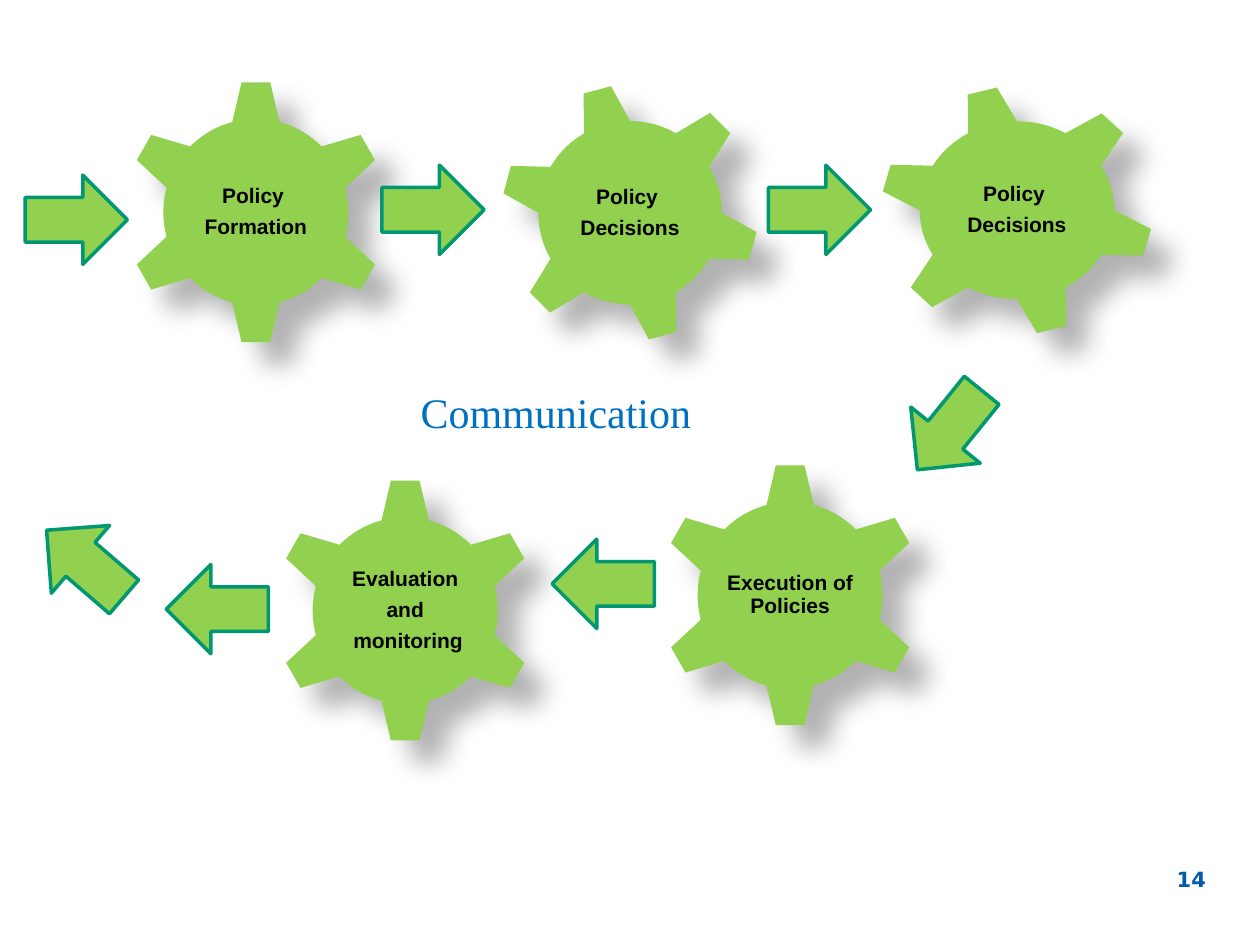
import math

from lxml import etree
from pptx import Presentation
from pptx.dml.color import RGBColor
from pptx.enum.shapes import MSO_SHAPE
from pptx.enum.text import MSO_ANCHOR, MSO_AUTO_SIZE, PP_ALIGN
from pptx.oxml.ns import qn
from pptx.util import Cm, Pt

GEAR = MSO_SHAPE.GEAR_6
RECT = MSO_SHAPE.RECTANGLE
ARROW = MSO_SHAPE.RIGHT_ARROW
MIDDLE = MSO_ANCHOR.MIDDLE
LEFT, CENTER, RIGHT = PP_ALIGN.LEFT, PP_ALIGN.CENTER, PP_ALIGN.RIGHT

GREEN, TEAL, BLACK = "92D050", "009771", "000000"
GEAR_W, GEAR_H, HUB = 5.33, 5.36, 2.64
ROOT_R, TIP_R = 1.85, 2.58


def rgb(value):
    return RGBColor.from_string(value)


def style(s, line=None):
    """Green fill, no theme shadow and an optional outline."""
    s.shadow.inherit = False
    s.fill.solid()
    s.fill.fore_color.rgb = rgb(GREEN)
    if line:
        s.line.color.rgb = rgb(line)
        s.line.width = Pt(2)
    else:
        s.line.fill.background()


def add_shadow(s):
    """Soft shadow, down and to the right."""
    effects = s._element.spPr.find(qn("a:effectLst"))
    shadow = etree.SubElement(effects, qn("a:outerShdw"), blurRad=str(Pt(15)),
                              dist=str(Pt(18)), dir=str(45 * 60000),
                              algn="tl", rotWithShape="0")
    color = etree.SubElement(shadow, qn("a:srgbClr"), val=BLACK)
    etree.SubElement(color, qn("a:alpha"), val="30000")


def format_font(p, name, size, color, bold=False):
    for r in p.runs:
        r.font.name, r.font.size, r.font.bold = name, Pt(size), bold
        r.font.color.rgb = rgb(color)


def set_label(s, text):
    """Bold centred label, one paragraph a line."""
    tf = s.text_frame
    tf.text = text
    tf.word_wrap = True
    tf.vertical_anchor = MIDDLE
    tf.margin_left = tf.margin_right = tf.margin_top = tf.margin_bottom = Cm(0.03)
    for p in tf.paragraphs:
        p.alignment = CENTER
        p.line_spacing = 0.9
        p.space_after = Pt(4.7)
        format_font(p, "Arial", 12, BLACK, bold=True)


def add_centered(shapes, kind, cx, cy, w, h):
    s = shapes.add_shape(kind, Cm(cx - w / 2), Cm(cy - h / 2), Cm(w), Cm(h))
    style(s)
    return s


def add_gear(slide, cx, cy, text):
    """Upright gear grouped with the square hub that holds its label."""
    shapes = slide.shapes.add_group_shape().shapes
    add_shadow(add_centered(shapes, GEAR, cx, cy, GEAR_W, GEAR_H))
    set_label(add_centered(shapes, RECT, cx, cy, HUB, HUB), text)


def add_turned_gear(slide, cx, cy, text, x_scale=1, y_scale=1):
    """Turned gear with upright text: a tooth, then an arc, in each sixth."""
    sector = [(0, ROOT_R), (8.7, TIP_R), (21.5, TIP_R)]
    sector += [(angle, ROOT_R) for angle in range(30, 60, 5)]
    points = []
    for start in range(0, 360, 60):
        for angle, radius in sector:
            a = math.radians(start + angle)
            points.append((Cm(cx + x_scale * radius * math.cos(a)),
                           Cm(cy + y_scale * radius * math.sin(a))))
    builder = slide.shapes.build_freeform(*points[0])
    builder.add_line_segments(points[1:], close=True)
    s = builder.convert_to_shape()
    style(s)
    add_shadow(s)
    set_label(s, text)


def add_arrow(slide, left, top, rotation=0):
    s = slide.shapes.add_shape(ARROW, Cm(left), Cm(top), Cm(2.06), Cm(1.8))
    s.rotation = rotation
    style(s, TEAL)


def add_text(slide, box, text, font, size, color, bold=False, align=LEFT, wrap=True):
    tf = slide.shapes.add_textbox(*(Cm(v) for v in box)).text_frame
    tf.text = text
    tf.word_wrap = wrap
    if not wrap:
        tf.auto_size = MSO_AUTO_SIZE.SHAPE_TO_FIT_TEXT
    p = tf.paragraphs[0]
    p.alignment = align
    format_font(p, font, size, color, bold)


def main():
    prs = Presentation()
    prs.slide_width, prs.slide_height = Cm(25.4), Cm(19.05)
    slide = prs.slides.add_slide(prs.slide_layouts[6])

    # Page number
    add_text(slide, (19.48, 17.35, 5.08, 1.07), "14", "DejaVu Sans", 12,
             "005BAB", bold=True, align=RIGHT)

    # Gears
    add_gear(slide, 5.16, 4.28, "Policy \nFormation")
    add_turned_gear(slide, 12.7, 4.29, "Policy \nDecisions")
    add_turned_gear(slide, 20.5, 4.24, "Policy \nDecisions", 1.06, 0.97)
    add_gear(slide, 15.93, 12, "Execution of Policies")
    add_gear(slide, 8.17, 12.31, "Evaluation\nand\n monitoring")

    # Arrows, in the order of the process
    for left, top, rotation in [
        (0.51, 3.53, 0), (7.7, 3.33, 0), (15.49, 3.33, 0), (18.11, 7.77, 129),
        (11.13, 10.87, 180), (3.35, 11.38, 180), (0.69, 10.46, 220.7),
    ]:
        add_arrow(slide, left, top, rotation)

    # Centre caption
    add_text(slide, (8.23, 7.67, 6.02, 1.27), "Communication",
             "Times New Roman", 24, "0070C0", wrap=False)

    prs.save("out.pptx")


if __name__ == "__main__":
    main()
